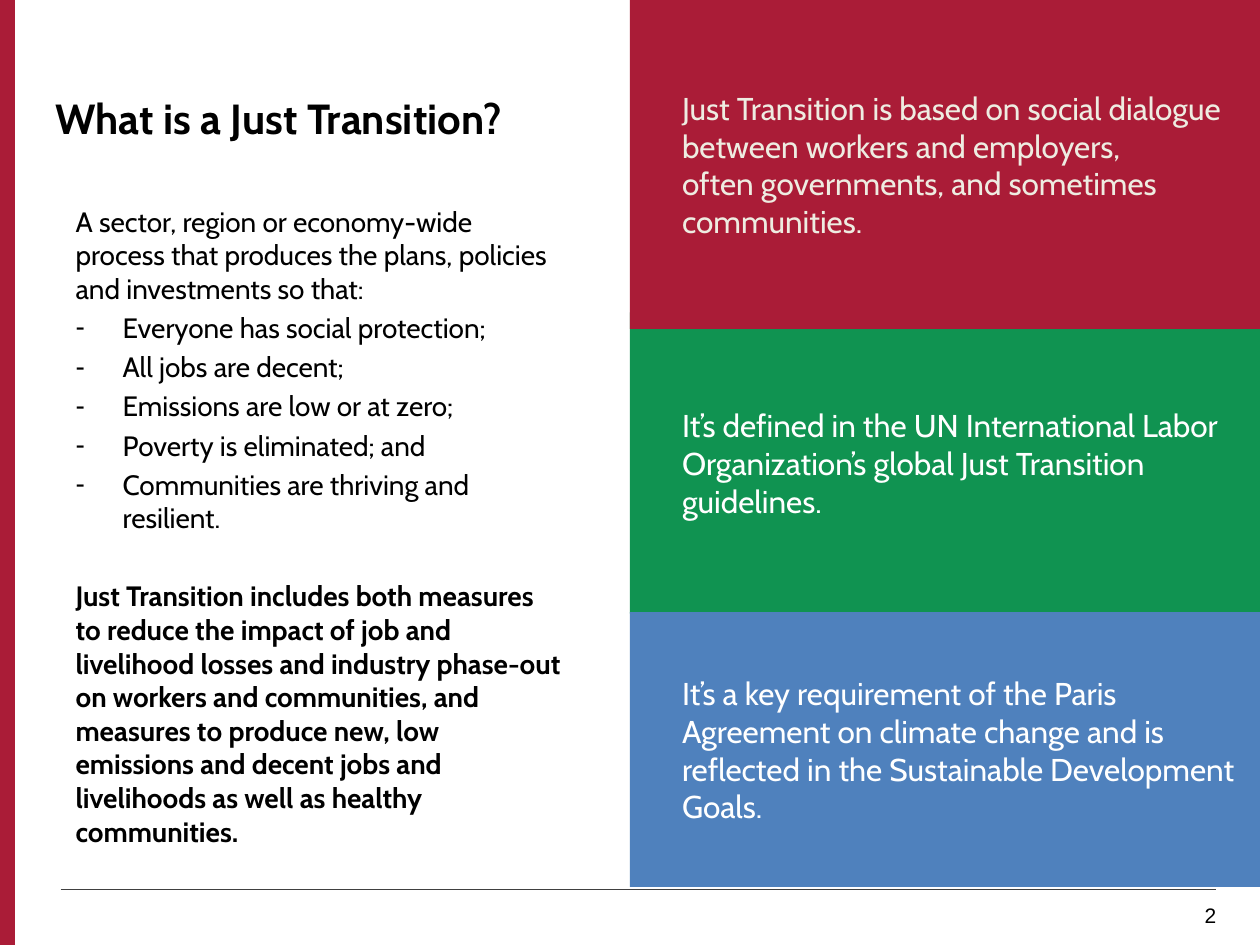
from dataclasses import dataclass

from lxml.etree import SubElement
from pptx import Presentation
from pptx.dml.color import RGBColor as RGB
from pptx.enum.shapes import MSO_CONNECTOR as Connector, MSO_SHAPE as Shape
from pptx.enum.text import MSO_ANCHOR as Anchor, MSO_AUTO_SIZE as AutoSize, PP_ALIGN as Align
from pptx.oxml.ns import qn
from pptx.util import Cm, Pt


@dataclass(frozen=True)
class Theme:
    font: str = "Cabin"
    number_font: str = "Arial"
    black: RGB = RGB(0x00, 0x00, 0x00)
    white: RGB = RGB(0xFF, 0xFF, 0xFF)
    cream: RGB = RGB(0xEE, 0xEC, 0xE1)
    grey: RGB = RGB(0x40, 0x40, 0x40)
    red: RGB = RGB(0xAA, 0x1C, 0x37)
    green: RGB = RGB(0x10, 0x93, 0x51)
    blue: RGB = RGB(0x4F, 0x81, 0xBD)
    title_size: Pt = Pt(24)
    panel_size: Pt = Pt(18)
    body_size: Pt = Pt(16)
    number_size: Pt = Pt(12)


class SlideBuilder:
    def __init__(self, slide, theme):
        self.slide = slide
        self.theme = theme

    def style(self, paragraph, size, color, bold=False, font=None):
        for run in paragraph.runs:
            run.font.name = font or self.theme.font
            run.font.size = size
            run.font.bold = bold
            run.font.color.rgb = color

    def indent(self, paragraph, left, hanging=0):
        props = paragraph._p.get_or_add_pPr()
        props.set("marL", str(Cm(left)))
        props.set("indent", str(-Cm(hanging)))
        return props

    def place(self, placeholder, left, top, width, height):
        placeholder.left, placeholder.top = Cm(left), Cm(top)
        placeholder.width, placeholder.height = Cm(width), Cm(height)
        frame = placeholder.text_frame
        frame.auto_size = AutoSize.NONE
        frame.vertical_anchor = Anchor.TOP
        return frame

    def title(self, text, *box):
        frame = self.place(self.slide.shapes.title, *box)
        frame.text = text
        heading = frame.paragraphs[0]
        heading.alignment = Align.LEFT
        self.style(heading, self.theme.title_size, self.theme.black, bold=True)

    def body(self, intro, goals, summary, *box):
        frame = self.place(self.slide.placeholders[1], *box)
        frame.text = "\n".join([intro, *goals, summary])
        last = len(goals) + 1
        for position, paragraph in enumerate(frame.paragraphs):
            if 0 < position < last:
                props = self.indent(paragraph, 0.95, 0.95)
                SubElement(props, qn("a:buChar")).set("char", "-")
            else:
                props = self.indent(paragraph, 0)
                SubElement(props, qn("a:buNone"))
            gap = {0: 0, last: 25.4}.get(position, 3.2)
            paragraph.space_before = Pt(gap)
            self.style(paragraph, self.theme.body_size, self.theme.black, bold=position == last)

    def block(self, fill, left, top, width, height):
        block = self.slide.shapes.add_shape(
            Shape.RECTANGLE, Cm(left), Cm(top), Cm(width), Cm(height))
        block.shadow.inherit = False
        block.fill.solid()
        block.fill.fore_color.rgb = fill
        block.line.fill.background()
        return block

    def panel(self, text, color, fill, *box):
        frame = self.block(fill, *box).text_frame
        frame.word_wrap = True
        frame.vertical_anchor = Anchor.MIDDLE
        frame.text = text
        for paragraph in frame.paragraphs:
            self.indent(paragraph, 0.8)
            paragraph.alignment = Align.LEFT
            self.style(paragraph, self.theme.panel_size, color)

    def rule(self, left, right, y):
        rule = self.slide.shapes.add_connector(
            Connector.STRAIGHT, Cm(left), Cm(y), Cm(right), Cm(y))
        rule.line.color.rgb = self.theme.grey
        rule.line.width = Pt(0.5)
        SubElement(rule._element.spPr, qn("a:effectLst"))

    def page_number(self, text, left, top, width, height):
        frame = self.slide.shapes.add_textbox(
            Cm(left), Cm(top), Cm(width), Cm(height)).text_frame
        frame.word_wrap = True
        frame.text = text
        number = frame.paragraphs[0]
        number.alignment = Align.RIGHT
        self.style(number, self.theme.number_size, self.theme.black, font=self.theme.number_font)


def main():
    deck = Presentation()
    deck.slide_width, deck.slide_height = Cm(25.4), Cm(19.05)
    theme = Theme()
    builder = SlideBuilder(deck.slides.add_slide(deck.slide_layouts[1]), theme)

    # Frame: footer rule, side band and page number
    builder.rule(1.22, 24.51, 17.93)
    builder.block(theme.red, 0, 0, 0.3, 19.05)
    builder.page_number("2", 18.85, 18.06, 5.92, 0.99)

    # Left column: the definition
    builder.title("What is a Just Transition?", 0.86, 1.73, 11.25, 1.75)
    goals = [
        "Everyone has social protection;",
        "All jobs are decent;",
        "Emissions are low or at zero;",
        "Poverty is eliminated; and",
        "Communities are thriving and resilient.",
    ]
    builder.body(
        "A sector, region or economy-wide process that produces the plans, policies "
        "and investments so that:",
        goals,
        "Just Transition includes both measures to reduce the impact of job and livelihood "
        "losses and industry phase-out on workers and communities, and measures to produce "
        "new, low emissions and decent jobs and livelihoods as well as healthy communities.",
        1.27, 3.99, 10.31, 11.05)

    # Right column: three stacked panels, the red one overlapping the green
    panels = [
        ("It’s defined in the UN International Labor Organization’s global Just Transition "
         "guidelines.", theme.white, theme.green, 6.3, 6.07),
        ("It’s a key requirement of the Paris Agreement on climate change and is reflected "
         "in the Sustainable Development Goals.", theme.white, theme.blue, 12.34, 5.54),
        ("Just Transition is based on social dialogue between workers and employers,\n"
         "often governments, and sometimes communities.", theme.cream, theme.red, 0, 6.63),
    ]
    for text, color, fill, top, height in panels:
        builder.panel(text, color, fill, 12.7, top, 12.72, height)

    deck.save("out.pptx")


if __name__ == "__main__":
    main()
